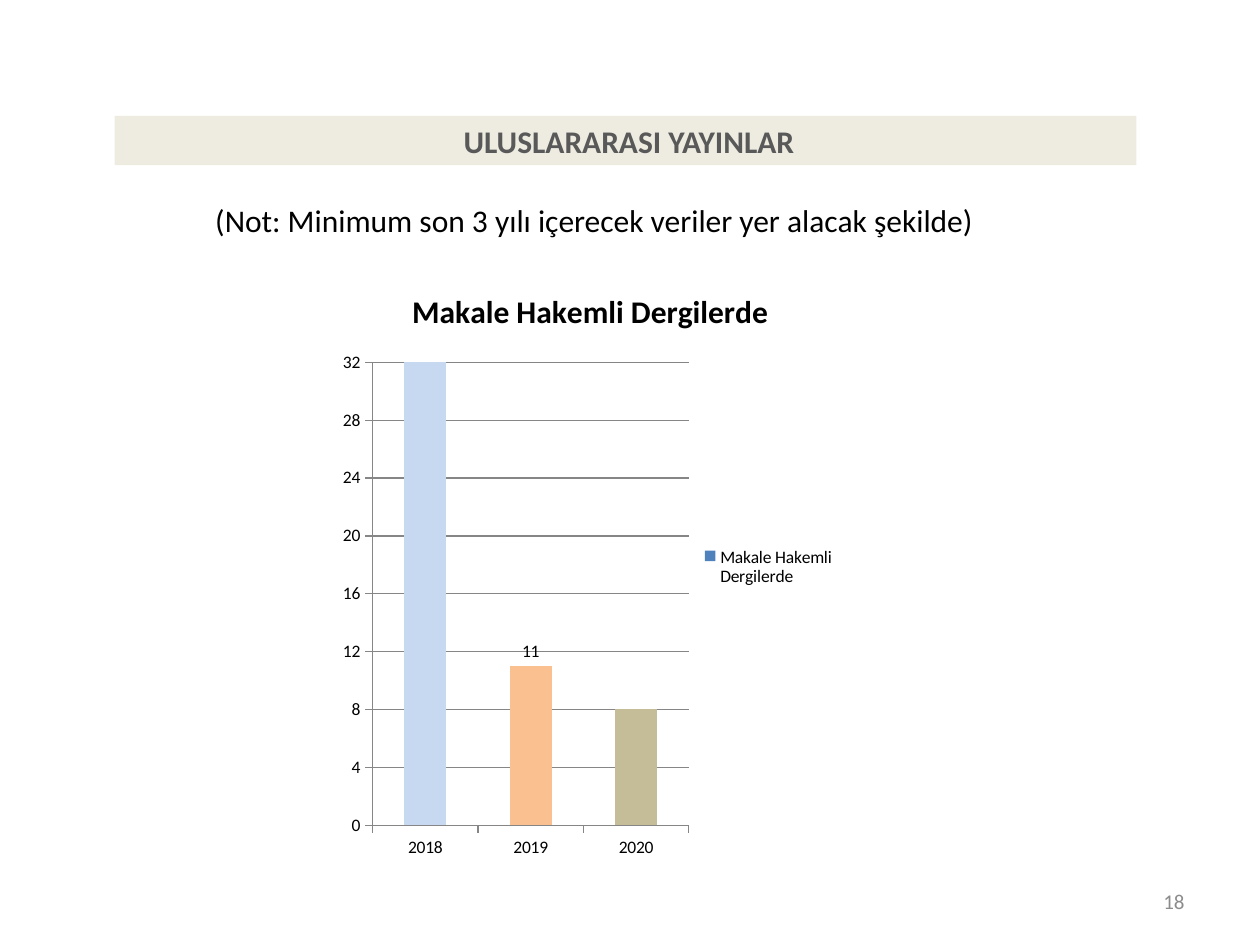
from dataclasses import dataclass

from pptx import Presentation
from pptx.chart.data import CategoryChartData
from pptx.dml.color import RGBColor
from pptx.enum.chart import (XL_CHART_TYPE, XL_LABEL_POSITION,
                             XL_LEGEND_POSITION, XL_TICK_MARK)
from pptx.enum.text import MSO_ANCHOR, PP_ALIGN
from pptx.util import Inches, Pt


@dataclass(frozen=True)
class Theme:
    face: str = "Calibri"
    ink: str = "000000"
    head: str = "595959"
    band: str = "EEECE1"
    mute: str = "8C8C8C"
    grid: str = "868686"
    series: str = "4F81BD"
    bars: tuple = ("C6D9F1", "FAC090", "C4BD97")
    large: int = 18
    small: int = 12
    tiny: int = 10


THEME = Theme()


def paint(fill, color):
    fill.solid()
    fill.fore_color.rgb = RGBColor.from_string(color)


def style(font, size, color, bold=False):
    font.name = THEME.face
    font.size = Pt(size)
    font.bold = bold
    font.color.rgb = RGBColor.from_string(color)


def write(frame, text, size, color, align=PP_ALIGN.LEFT,
          anchor=MSO_ANCHOR.TOP, bold=False):
    frame.word_wrap = True
    frame.vertical_anchor = anchor
    frame.text = text
    line = frame.paragraphs[0]
    line.alignment = align
    style(line.font, size, color, bold)


def add_title(slide, text):
    title = slide.shapes.title
    title.left, title.top = Inches(0.91), Inches(0.92)
    title.width, title.height = Inches(8.11), Inches(0.39)
    paint(title.fill, THEME.band)
    write(title.text_frame, text, THEME.large, THEME.head,
          PP_ALIGN.CENTER, MSO_ANCHOR.MIDDLE, bold=True)


def add_text(slide, box, *args, **look):
    shape = slide.shapes.add_textbox(*map(Inches, box))
    write(shape.text_frame, *args, **look)


def style_axes(chart):
    scale = chart.value_axis
    scale.minimum_scale, scale.maximum_scale = 0, 32
    scale.major_unit = 4
    scale.has_major_gridlines = True
    for axis in (scale, chart.category_axis):
        axis.major_tick_mark = XL_TICK_MARK.OUTSIDE
        axis.minor_tick_mark = XL_TICK_MARK.NONE
    for part in (scale, chart.category_axis, scale.major_gridlines):
        part.format.line.width = Pt(0.75)
        paint(part.format.line.fill, THEME.grid)


def add_chart(slide, box, name, years, counts):
    data = CategoryChartData()
    data.categories = years
    data.add_series(name, counts)
    chart = slide.shapes.add_chart(
        XL_CHART_TYPE.COLUMN_CLUSTERED, *map(Inches, box), data).chart
    style(chart.font, THEME.tiny, THEME.ink)

    chart.has_title = True
    frame = chart.chart_title.text_frame
    frame.text = name
    style(frame.paragraphs[0].font, THEME.large, THEME.ink, bold=True)

    chart.has_legend = True
    chart.legend.position = XL_LEGEND_POSITION.RIGHT
    chart.legend.include_in_layout = False

    style_axes(chart)
    plot = chart.plots[0]
    plot.gap_width = 150
    plot.vary_by_categories = False
    series = plot.series[0]
    paint(series.format.fill, THEME.series)
    for index, color in enumerate(THEME.bars):
        paint(series.points[index].format.fill, color)
    series.points[1].data_label.position = XL_LABEL_POSITION.OUTSIDE_END


def main():
    deck = Presentation()
    deck.slide_width, deck.slide_height = Inches(10), Inches(7.5)
    slide = deck.slides.add_slide(deck.slide_layouts[5])
    add_title(slide, " ULUSLARARASI YAYINLAR")
    add_chart(slide, (2.64, 2.1, 4.09, 4.8), "Makale Hakemli Dergilerde",
              ("2018", "2019", "2020"), (38, 11, 8))
    add_text(slide, (1.61, 1.55, 8.11, 0.4),
             "(Not: Minimum son 3 yılı içerecek veriler yer alacak şekilde)",
             THEME.large, THEME.ink)
    add_text(slide, (7.17, 6.95, 2.33, 0.4), "18", THEME.small, THEME.mute,
             align=PP_ALIGN.RIGHT, anchor=MSO_ANCHOR.MIDDLE)
    deck.save("out.pptx")


if __name__ == "__main__":
    main()
